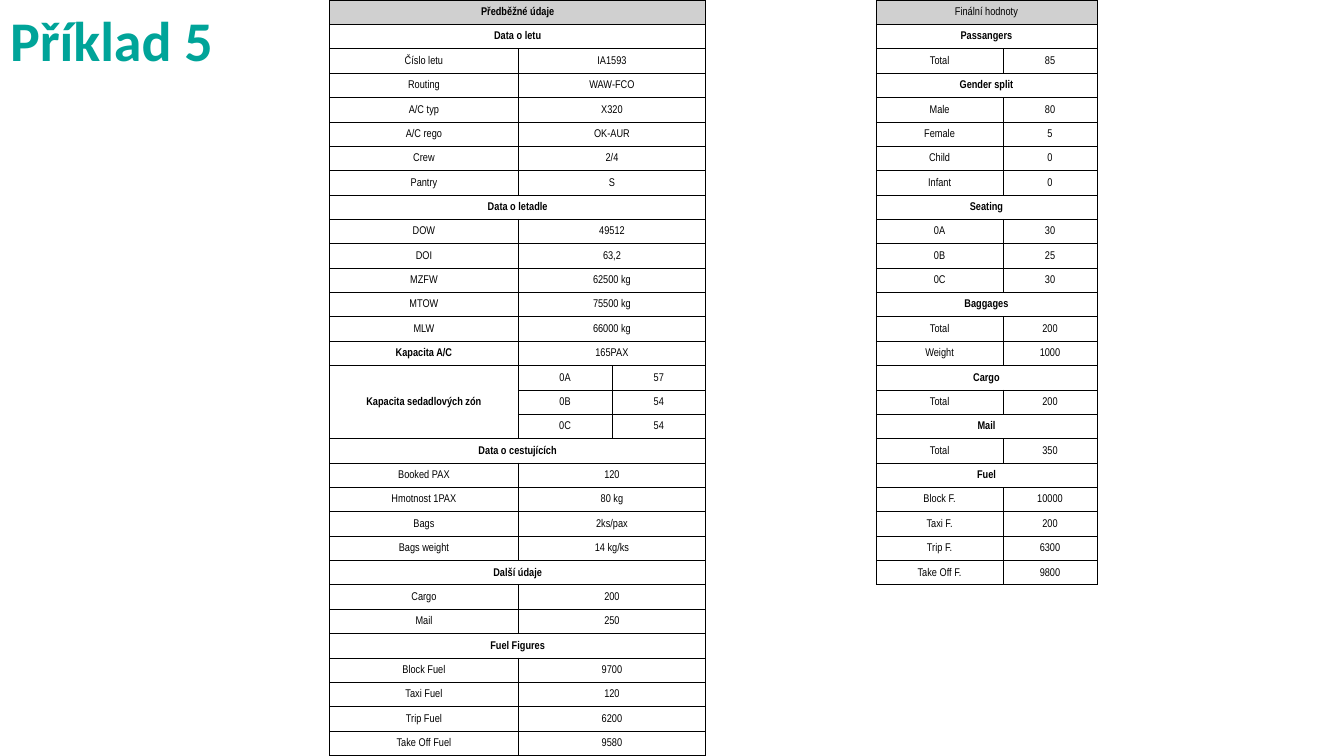
import dataclasses

import lxml.etree
import pptx
import pptx.dml.color
import pptx.enum.text
import pptx.oxml.ns
import pptx.util

ANCHOR = pptx.enum.text.MSO_ANCHOR
ALIGN = pptx.enum.text.PP_ALIGN


@dataclasses.dataclass(frozen=True)
class Theme:
    title_color: str = "00A499"
    ink: str = "000000"
    header_fill: str = "D0D0D0"
    title_font: str = "Calibri"
    table_font: str = "Arial Narrow"
    title_size: int = 40
    table_size: int = 8
    border: float = 0.5
    plain_style: str = "{2D5ABB26-0587-4C30-8999-92F81FD0307C}"


THEME = Theme()
SLIDE_WIDTH, SLIDE_HEIGHT = 13.33, 7.5

# Table grid: preliminary data, two gap columns, final values
COLUMNS = [1.87, 0.93, 0.93, 0.93, 0.76, 1.26, 0.93]
PRELIMINARY_COLUMNS = (0, 2)
FINAL_COLUMNS = (5, 6)

# One text is a heading; an empty label continues the label above
PRELIMINARY = [
    ("Předběžné údaje",),
    ("Data o letu",),
    ("Číslo letu", "IA1593"),
    ("Routing", "WAW-FCO"),
    ("A/C typ", "X320"),
    ("A/C rego", "OK-AUR"),
    ("Crew", "2/4"),
    ("Pantry", "S"),
    ("Data o letadle",),
    ("DOW", "49512"),
    ("DOI", "63,2"),
    ("MZFW", "62500 kg"),
    ("MTOW", "75500 kg"),
    ("MLW", "66000 kg"),
    ("Kapacita A/C", "165PAX"),
    ("Kapacita sedadlových zón", "0A", "57"),
    ("", "0B", "54"),
    ("", "0C", "54"),
    ("Data o cestujících",),
    ("Booked PAX", "120"),
    ("Hmotnost 1PAX", "80 kg"),
    ("Bags", "2ks/pax"),
    ("Bags weight", "14 kg/ks"),
    ("Další údaje",),
    ("Cargo", "200"),
    ("Mail", "250"),
    ("Fuel Figures",),
    ("Block Fuel", "9700"),
    ("Taxi Fuel", "120"),
    ("Trip Fuel", "6200"),
    ("Take Off Fuel", "9580"),
]
FINAL = [
    ("Finální hodnoty",),
    ("Passangers",),
    ("Total", "85"),
    ("Gender split",),
    ("Male", "80"),
    ("Female", "5"),
    ("Child", "0"),
    ("Infant", "0"),
    ("Seating",),
    ("0A", "30"),
    ("0B", "25"),
    ("0C", "30"),
    ("Baggages",),
    ("Total", "200"),
    ("Weight", "1000"),
    ("Cargo",),
    ("Total", "200"),
    ("Mail",),
    ("Total", "350"),
    ("Fuel",),
    ("Block F.", "10000"),
    ("Taxi F.", "200"),
    ("Trip F.", "6300"),
    ("Take Off F.", "9800"),
]
BOLD_LABELS = {"Kapacita A/C", "Kapacita sedadlových zón"}


def write_text(frame, text, *, font, size, color, bold=False, align=ALIGN.LEFT, spacing=None):
    paragraph = frame.paragraphs[0]
    paragraph.alignment = align
    paragraph.line_spacing = spacing
    run = paragraph.add_run()
    run.text = text
    run.font.name = font
    run.font.size = pptx.util.Pt(size)
    run.font.bold = bold
    run.font.color.rgb = pptx.dml.color.RGBColor.from_string(color)


def add_borders(cell):
    properties = cell._tc.get_or_add_tcPr()
    for side in ("lnL", "lnR", "lnT", "lnB"):
        line = lxml.etree.SubElement(properties, pptx.oxml.ns.qn(f"a:{side}"),
                                     w=str(pptx.util.Pt(THEME.border)))
        solid = lxml.etree.SubElement(line, pptx.oxml.ns.qn("a:solidFill"))
        lxml.etree.SubElement(solid, pptx.oxml.ns.qn("a:srgbClr"), val=THEME.ink)


def prepare_cell(cell):
    """Tight margins, no fill, and a small type size for cells that stay empty."""
    cell.margin_left = cell.margin_right = cell.margin_top = pptx.util.Inches(0.01)
    cell.margin_bottom = 0
    cell.vertical_anchor = ANCHOR.MIDDLE
    cell.fill.background()
    lxml.etree.SubElement(cell.text_frame.paragraphs[0]._p, pptx.oxml.ns.qn("a:endParaRPr"),
                          sz=str(THEME.table_size * 100))


def fill_block(table, columns, entries, bold_title):
    first, last = columns
    label_row = 0
    for row, entry in enumerate(entries):
        for column in range(first, last + 1):
            add_borders(table.cell(row, column))
            prepare_cell(table.cell(row, column))
            if row == 0:
                fill = table.cell(row, column).fill
                fill.solid()
                fill.fore_color.rgb = pptx.dml.color.RGBColor.from_string(THEME.header_fill)

        # The last text of a row takes the remaining columns
        end = first + len(entry) - 1
        if end < last:
            table.cell(row, end).merge(table.cell(row, last))
        for column, text in enumerate(entry, first):
            if text:
                bold = bold_title if row == 0 else len(entry) == 1 or text in BOLD_LABELS
                write_text(table.cell(row, column).text_frame, text, font=THEME.table_font,
                           size=THEME.table_size, color=THEME.ink, bold=bold,
                           align=ALIGN.CENTER)

        # A label with continuation rows is merged downwards
        if entry[0]:
            label_row = row
        elif row + 1 == len(entries) or entries[row + 1][0]:
            table.cell(label_row, first).merge(table.cell(row, first))


def add_title(slide, left, top, width, height):
    title = slide.shapes.title
    title.left, title.top = pptx.util.Inches(left), pptx.util.Inches(top)
    title.width, title.height = pptx.util.Inches(width), pptx.util.Inches(height)
    title.text_frame.vertical_anchor = ANCHOR.BOTTOM
    title.text_frame.word_wrap = True
    write_text(title.text_frame, "Příklad 5", font=THEME.title_font, size=THEME.title_size,
               color=THEME.title_color, bold=True, spacing=0.9)


def add_flight_table(slide, left, top, height):
    row_count = len(PRELIMINARY)
    table = slide.shapes.add_table(
        row_count, len(COLUMNS), pptx.util.Inches(left), pptx.util.Inches(top),
        pptx.util.Inches(sum(COLUMNS)), pptx.util.Inches(height)).table
    table.first_row = table.horz_banding = False
    table._tbl.tblPr.find(pptx.oxml.ns.qn("a:tableStyleId")).text = THEME.plain_style
    for column, width in zip(table.columns, COLUMNS):
        column.width = pptx.util.Inches(width)
    for row in table.rows:
        row.height = pptx.util.Inches(height / row_count)

    fill_block(table, PRELIMINARY_COLUMNS, PRELIMINARY, bold_title=True)
    fill_block(table, FINAL_COLUMNS, FINAL, bold_title=False)

    # Empty cells: the gap and the area below the final values
    for row in range(row_count):
        for column in range(PRELIMINARY_COLUMNS[1] + 1, len(COLUMNS)):
            if column < FINAL_COLUMNS[0] or row >= len(FINAL):
                prepare_cell(table.cell(row, column))


def main():
    presentation = pptx.Presentation()
    presentation.slide_width = pptx.util.Inches(SLIDE_WIDTH)
    presentation.slide_height = pptx.util.Inches(SLIDE_HEIGHT)
    slide = presentation.slides.add_slide(presentation.slide_layouts[5])
    add_title(slide, 0, -0.01, 12.91, 0.79)
    add_flight_table(slide, 3.27, 0, SLIDE_HEIGHT)
    presentation.save("out.pptx")


if __name__ == "__main__":
    main()
